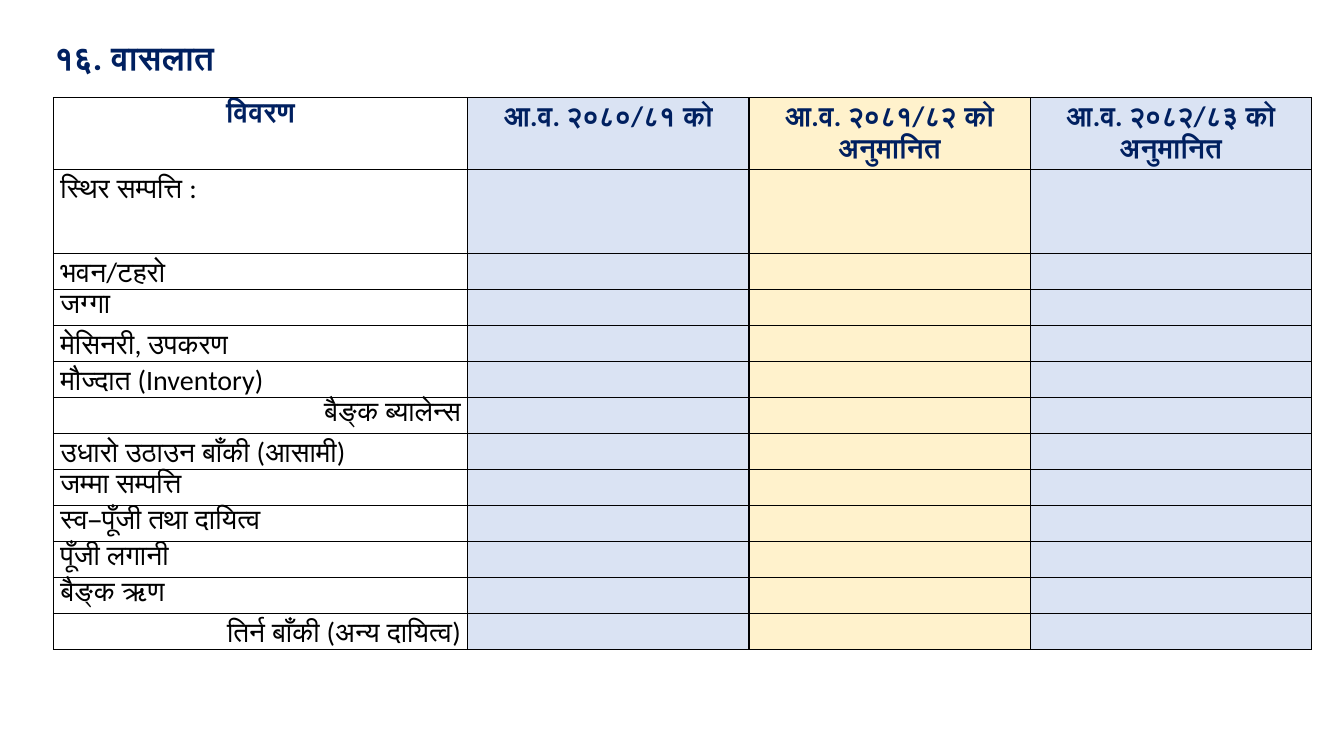
from lxml import etree
from pptx import Presentation
from pptx.dml.color import RGBColor
from pptx.enum import text
from pptx.oxml import ns
from pptx.util import Inches, Pt

COLORS = {
    "navy": "002060",
    "black": "000000",
    "white": "FFFFFF",
    "blue": "DAE3F3",
    "cream": "FFF2CC",
}
LEFT, CENTER, RIGHT = text.PP_ALIGN.LEFT, text.PP_ALIGN.CENTER, text.PP_ALIGN.RIGHT

HEADERS = [
    "विवरण",
    "आ.व. २०८०/८१ को",
    "आ.व. २०८१/८२ को अनुमानित",
    "आ.व. २०८२/८३ को अनुमानित",
]
ITEMS = [
    "स्थिर सम्पत्ति :",
    "भवन/टहरो",
    "जग्गा",
    "मेसिनरी, उपकरण",
    "मौज्दात (Inventory)",
    "बैङ्क ब्यालेन्स",
    "उधारो उठाउन बाँकी (आसामी)",
    "जम्मा सम्पत्ति",
    "स्व–पूँजी तथा दायित्व",
    "पूँजी लगानी",
    "बैङ्क ऋण",
    "तिर्न बाँकी (अन्य दायित्व)",
]
RIGHT_ALIGNED = {"बैङ्क ब्यालेन्स", "तिर्न बाँकी (अन्य दायित्व)"}
COLUMN_FILLS = ["white", "blue", "cream", "blue"]
COLUMN_WIDTHS = [4.11] + [2.79] * 3
ROW_HEIGHTS = [0.71, 0.83] + [3.92 / 11] * 11


def write(frame, words, size=20, font="Calibri", color="black", bold=False,
          align=LEFT, line_spacing=None):
    paragraph = frame.paragraphs[0]
    paragraph.alignment = align
    if line_spacing:
        paragraph.line_spacing = line_spacing
    run = paragraph.add_run()
    run.text = words
    run.font.size = Pt(size)
    run.font.name = font
    run.font.bold = bold
    run.font.color.rgb = RGBColor.from_string(COLORS[color])


class SlideBuilder:
    def __init__(self, presentation):
        self.slide = presentation.slides.add_slide(presentation.slide_layouts[6])
        self.border_color = COLORS["black"]
        self.border_width = Pt(1)

    def title(self, words, left, top, width, height):
        box = self.slide.shapes.add_textbox(
            Inches(left), Inches(top), Inches(width), Inches(height))
        box.text_frame.word_wrap = False
        box.text_frame.auto_size = text.MSO_AUTO_SIZE.SHAPE_TO_FIT_TEXT
        write(box.text_frame, words, size=24, font="Roboto", color="navy", bold=True)

    def table(self, left, top, widths, heights):
        frame = self.slide.shapes.add_table(
            len(heights), len(widths), Inches(left), Inches(top),
            Inches(sum(widths)), Inches(sum(heights)))
        table = frame.table
        table.first_row = table.horz_banding = False
        for column, width in zip(table.columns, widths):
            column.width = Inches(width)
        for row, height in zip(table.rows, heights):
            row.height = Inches(height)
            for cell, fill in zip(row.cells, COLUMN_FILLS):
                self.style_cell(cell, fill)
        return table

    def style_cell(self, cell, fill):
        cell.margin_left = cell.margin_right = Inches(0.07)
        cell.margin_top = cell.margin_bottom = 0
        properties = cell._tc.get_or_add_tcPr()
        for side in ("a:lnL", "a:lnR", "a:lnT", "a:lnB"):
            line = etree.SubElement(properties, ns.qn(side), w=str(self.border_width))
            solid = etree.SubElement(line, ns.qn("a:solidFill"))
            etree.SubElement(solid, ns.qn("a:srgbClr"), val=self.border_color)
        cell.fill.solid()
        cell.fill.fore_color.rgb = RGBColor.from_string(COLORS[fill])


def main():
    presentation = Presentation()
    presentation.slide_width = Inches(13.33)
    presentation.slide_height = Inches(7.5)

    builder = SlideBuilder(presentation)
    builder.title("१६. वासलात", 0.44, 0.32, 1.91, 0.5)
    balance_sheet = builder.table(0.53, 0.97, COLUMN_WIDTHS, ROW_HEIGHTS)
    for column, header in enumerate(HEADERS):
        write(balance_sheet.cell(0, column).text_frame, header, color="navy",
              bold=True, align=CENTER, line_spacing=1.07)
    for row, item in enumerate(ITEMS, start=1):
        write(balance_sheet.cell(row, 0).text_frame, item, line_spacing=1.07,
              align=RIGHT if item in RIGHT_ALIGNED else LEFT)

    presentation.save("out.pptx")


if __name__ == "__main__":
    main()
